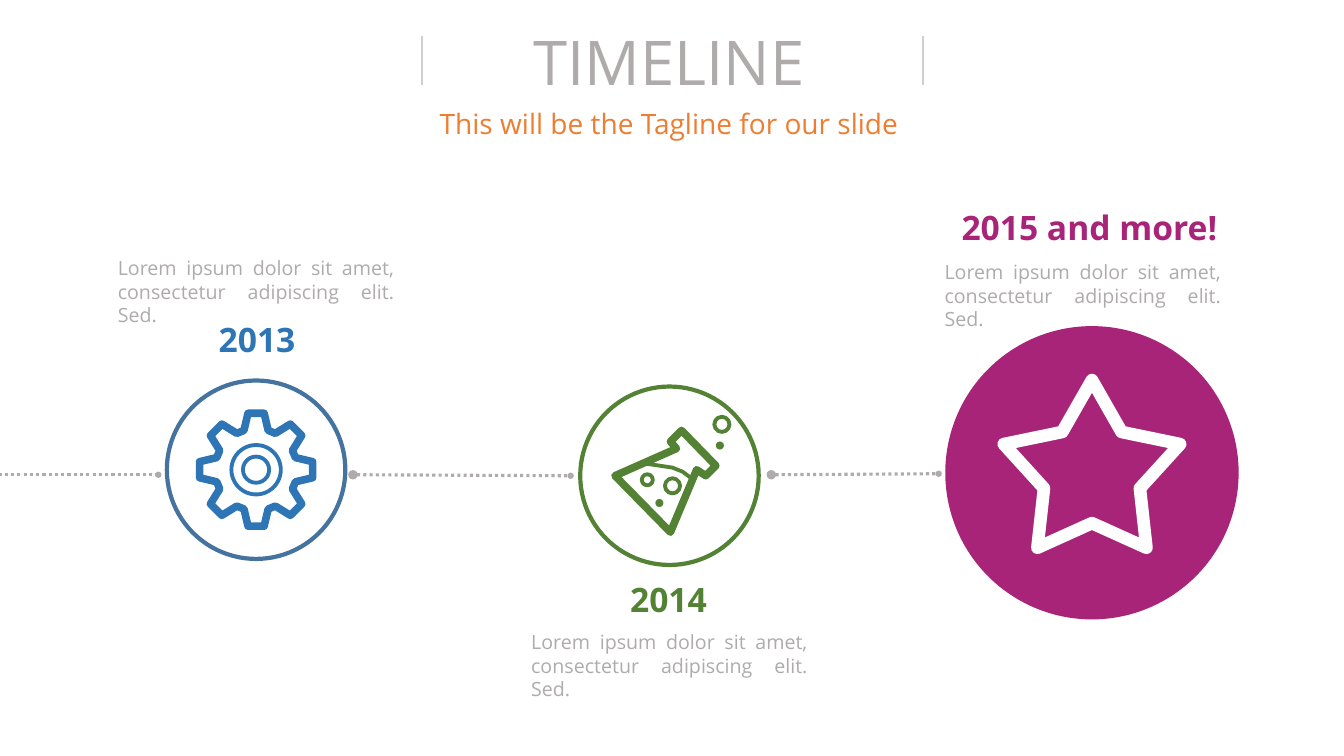
from dataclasses import dataclass
from math import cos, pi, sin

from lxml.etree import SubElement
from pptx import Presentation
from pptx.dml.color import RGBColor
from pptx.enum.dml import MSO_LINE_DASH_STYLE as Dash
from pptx.enum.shapes import MSO_CONNECTOR as Connector, MSO_SHAPE as Shape
from pptx.enum.text import PP_ALIGN as Align
from pptx.oxml.ns import qn
from pptx.util import Inches, Pt


@dataclass(frozen=True)
class Theme:
    """Colours, font and type sizes of the slide."""
    font: str = "Open Sans"
    white: str = "FFFFFF"
    grey: str = "AFABAB"
    rule: str = "D0CECE"
    orange: str = "ED7D31"
    blue: str = "2E75B6"
    blue_ring: str = "43739E"
    green: str = "548235"
    purple: str = "A82479"
    title: int = 44
    year: int = 24
    tagline: int = 20
    body: int = 14


THEME = Theme()
LOREM = "Lorem ipsum dolor sit amet, consectetur adipiscing elit. Sed."


def add_text(slide, box, text, size, color, bold=False, align=Align.CENTER):
    """Add one wrapped paragraph in a box of inches."""
    frame = slide.shapes.add_textbox(*map(Inches, box)).text_frame
    frame.word_wrap = True
    paragraph = frame.paragraphs[0]
    paragraph.alignment = align
    run = paragraph.add_run()
    run.text = text
    style = {"name": THEME.font, "size": Pt(size), "bold": bold}
    for name, value in style.items():
        setattr(run.font, name, value)
    run.font.color.rgb = RGBColor.from_string(color)


def paint(shape, fill=None, line=None, width=0):
    """Set the fill and outline of a shape, with None for neither."""
    shape.shadow.inherit = False
    for part, color in ((shape.fill, fill), (shape.line.fill, line)):
        if color:
            part.solid()
            part.fore_color.rgb = RGBColor.from_string(color)
        else:
            part.background()
    if line:
        shape.line.width = Pt(width)


def add_circle(slide, center, diameter, fill=None, line=None, width=0):
    """Add a circle around a centre point."""
    left, top = (value - diameter / 2 for value in center)
    box = map(Inches, (left, top, diameter, diameter))
    paint(slide.shapes.add_shape(Shape.OVAL, *box), fill, line, width)


def add_outline(slide, center, points, color, width, close=True):
    """Stroke a round-cornered path given relative to a centre point."""
    placed = [(Inches(center[0] + x), Inches(center[1] + y)) for x, y in points]
    builder = slide.shapes.build_freeform(*placed[0], scale=1.0)
    builder.add_line_segments(placed[1:], close=close)
    shape = builder.convert_to_shape()
    paint(shape, line=color, width=width)
    SubElement(shape.line._get_or_add_ln(), qn("a:round"))


def add_line(slide, start, end, color, width):
    """Add a straight line without shadow."""
    ends = map(Inches, (*start, *end))
    connector = slide.shapes.add_connector(Connector.STRAIGHT, *ends)
    connector.line.color.rgb = RGBColor.from_string(color)
    connector.line.width = Pt(width)
    SubElement(connector._element.spPr, qn("a:effectLst"))
    return connector


def add_header(slide, left, top, width):
    """Add the title between two rules, with the tagline below."""
    add_text(slide, (left, top, width, 0.84), "TIMELINE", THEME.title, THEME.grey)
    add_text(slide, (left, top + 0.82, width, 0.44),
             "This will be the Tagline for our slide", THEME.tagline, THEME.orange)
    for x in (left + 2.05, left + 7.01):
        add_line(slide, (x, top + 0.17), (x, top + 0.65), THEME.rule, 1.5)


def add_link(slide, start, end):
    """Add a dotted link with a large dot at its start and a small one at its end."""
    connector = add_line(slide, start, end, THEME.grey, 2.25)
    connector.line.dash_style = Dash.ROUND_DOT
    line = connector.line._get_or_add_ln()
    for tag, size in (("a:headEnd", "med"), ("a:tailEnd", "sm")):
        SubElement(line, qn(tag), type="oval", w=size, len=size)


def draw_gear(slide, center):
    """Draw an eight-toothed gear with two rings."""
    tooth = [(-0.12, -0.39), (-0.08, -0.56), (0.08, -0.56), (0.12, -0.39)]
    turns = [step * pi / 4 for step in range(8)]
    points = [(x * cos(turn) - y * sin(turn), x * sin(turn) + y * cos(turn))
              for turn in turns for x, y in tooth]
    add_outline(slide, center, points, THEME.blue, 5.4)
    for diameter in (0.49, 0.26):
        add_circle(slide, center, diameter, line=THEME.blue, width=2.75)


def draw_flask(slide, center):
    """Draw a tilted flask with liquid and bubbles."""
    glass = [(0.01, -0.34), (0.12, -0.45), (0.46, -0.1), (0.36, 0),
             (0.27, -0.06), (0.01, 0.56), (-0.54, 0), (0.07, -0.27)]
    liquid = [(-0.24, -0.12), (-0.1, -0.1), (0.03, -0.08), (0.13, -0.04), (0.25, 0.05)]
    add_outline(slide, center, glass, THEME.green, 5.4)
    add_outline(slide, center, liquid, THEME.green, 2.75, close=False)
    for x, y, diameter in ((0.03, 0.1, 0.15), (0.52, -0.51, 0.15), (-0.22, 0.04, 0.11)):
        add_circle(slide, (center[0] + x, center[1] + y), diameter,
                   line=THEME.green, width=2.75)
    for x, y in ((-0.1, 0.27), (0.5, -0.3)):
        add_circle(slide, (center[0] + x, center[1] + y), 0.08, fill=THEME.green)


def draw_star(slide, center):
    """Draw a five-pointed star outline."""
    points = [(radius * sin(step * pi / 5), -radius * cos(step * pi / 5))
              for step in range(10) for radius in ((0.92, 0.5)[step % 2],)]
    add_outline(slide, center, points, THEME.white, 9)


def add_milestone(slide, center, diameter, fill, ring, draw_icon):
    """Add a round badge with its icon."""
    add_circle(slide, center, diameter, fill, ring, 3)
    draw_icon(slide, center)


def add_caption(slide, year_box, body_at, year, color):
    """Add a bold year and its justified description."""
    add_text(slide, year_box, year, THEME.year, color, bold=True)
    add_text(slide, (*body_at, 2.94, 0.57), LOREM, THEME.body, THEME.grey,
             align=Align.JUSTIFY)


def main():
    """Build and save the timeline slide."""
    presentation = Presentation()
    presentation.slide_width, presentation.slide_height = Inches(13.33), Inches(7.5)
    slide = presentation.slides.add_slide(presentation.slide_layouts[6])
    add_header(slide, 2.14, 0.19, 8.99)
    for milestone in (
        ((6.64, 4.72), 1.77, THEME.white, THEME.green, draw_flask),
        ((2.54, 4.66), 1.77, THEME.white, THEME.blue_ring, draw_gear),
        ((10.83, 4.69), 2.91, THEME.purple, None, draw_star),
    ):
        add_milestone(slide, *milestone)
    for start, end in (((-0.18, 4.71), (1.57, 4.71)), ((3.5, 4.71), (5.66, 4.72)),
                       ((7.65, 4.71), (9.31, 4.7))):
        add_link(slide, start, end)
    for caption in (
        ((1.81, 3.11, 1.48, 0.5), (1.07, 2.49), "2013", THEME.blue),
        ((5.89, 5.69, 1.48, 0.5), (5.17, 6.2), "2014", THEME.green),
        ((9.4, 2, 2.81, 0.5), (9.27, 2.53), "2015 and more!", THEME.purple),
    ):
        add_caption(slide, *caption)
    presentation.save("out.pptx")


if __name__ == "__main__":
    main()
